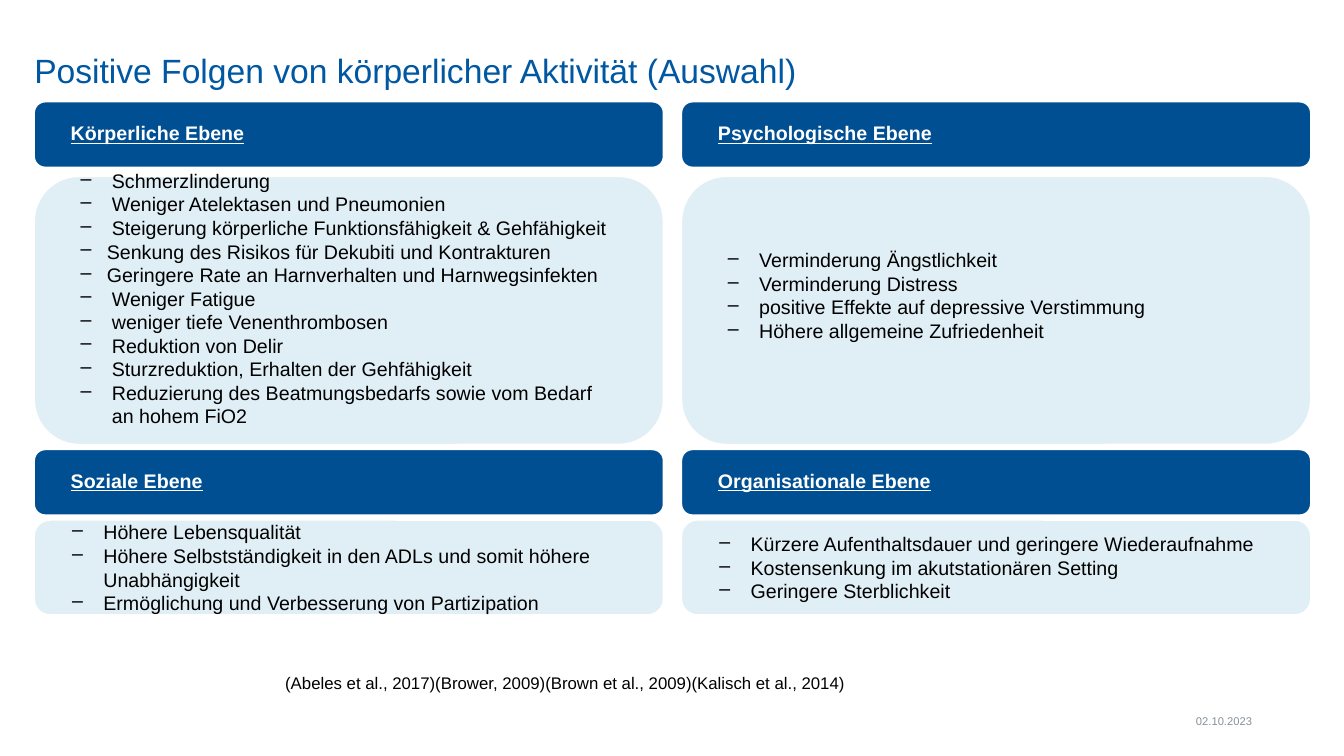
"""Builds a slide on the positive effects of physical activity at four levels."""
import pptx
import pptx.util
import pptx.dml.color
import pptx.enum.shapes
import pptx.enum.text
import pptx.oxml
import pptx.oxml.ns
import lxml.etree

Inches = pptx.util.Inches
RGB = pptx.dml.color.RGBColor
ALIGN = pptx.enum.text.PP_ALIGN
ANCHOR = pptx.enum.text.MSO_ANCHOR
BLUE = RGB(0x00, 0x57, 0xA2)
NAVY = RGB(0x00, 0x4F, 0x93)
PALE = RGB(0xB3, 0xD7, 0xE9)
GREY = RGB(0x86, 0x92, 0x9A)
WHITE = RGB(0xFF, 0xFF, 0xFF)
BLACK = RGB(0x00, 0x00, 0x00)

LEFT, PITCH, WIDTH = 0.34, 6.42, 6.24
HEAD = 0.65
ROWS = [(1.01, 1.75, 2.66), (4.46, 5.16, 0.94)]
WIDE, SLIM = 0.31, 0.26

LEVELS = [
    (0, 0, "Körperliche Ebene", 0.24, [
        ("Schmerzlinderung", WIDE),
        ("Weniger Atelektasen und Pneumonien", WIDE),
        ("Steigerung körperliche Funktionsfähigkeit & Gehfähigkeit", WIDE),
        ("Senkung des Risikos für Dekubiti und Kontrakturen", SLIM),
        ("Geringere Rate an Harnverhalten und Harnwegsinfekten", SLIM),
        ("Weniger Fatigue", WIDE),
        ("weniger tiefe Venenthrombosen", WIDE),
        ("Reduktion von Delir", WIDE),
        ("Sturzreduktion, Erhalten der Gehfähigkeit", WIDE),
        ("Reduzierung des Beatmungsbedarfs sowie vom Bedarf an hohem FiO2", WIDE),
    ]),
    (0, 1, "Psychologische Ebene", 0.3, [
        ("Verminderung Ängstlichkeit", WIDE),
        ("Verminderung Distress", WIDE),
        ("positive Effekte auf depressive Verstimmung", WIDE),
        ("Höhere allgemeine Zufriedenheit", WIDE),
    ]),
    (1, 0, "Soziale Ebene", 0, [
        ("Höhere Lebensqualität", WIDE),
        ("Höhere Selbstständigkeit in den ADLs und somit höhere Unabhängigkeit", WIDE),
        ("Ermöglichung und Verbesserung von Partizipation", WIDE),
    ]),
    (1, 1, "Organisationale Ebene", 0, [
        ("Kürzere Aufenthaltsdauer und geringere Wiederaufnahme", WIDE),
        ("Kostensenkung im akutstationären Setting", WIDE),
        ("Geringere Sterblichkeit", WIDE),
    ]),
]


def panel(col, top, high, fill, base=0):
    """Add a rounded panel in a column and return it."""
    box = slide.shapes.add_shape(
        pptx.enum.shapes.MSO_SHAPE.ROUNDED_RECTANGLE,
        Inches(LEFT + col * PITCH), Inches(top), Inches(WIDTH), Inches(high))
    box.adjustments[0] = 0.167
    box.shadow.inherit = False
    box.fill.solid()
    box.fill.fore_color.rgb = fill
    box.line.color.rgb = WHITE
    box.line.width = pptx.util.Pt(1)
    frame = box.text_frame
    frame.word_wrap = True
    frame.vertical_anchor = ANCHOR.MIDDLE
    frame.margin_left = frame.margin_right = Inches(0.33)
    frame.margin_top, frame.margin_bottom = 0, Inches(base)
    return box


def style(para, text, size, color, align=ALIGN.LEFT):
    """Fill a paragraph with text and set its font."""
    para.text = text
    para.alignment = align
    para.font.name = "Arial"
    para.font.size = pptx.util.Pt(size)
    para.font.color.rgb = color


deck = pptx.Presentation()
deck.slide_width, deck.slide_height = Inches(13.33), Inches(7.5)
slide = deck.slides.add_slide(deck.slide_layouts[6])

for row, col, name, base, items in LEVELS:
    top, under, high = ROWS[row]
    body = panel(col, under, high, PALE, base)
    tint = body.fill._xPr.find(".//" + pptx.oxml.ns.qn("a:srgbClr"))
    lxml.etree.SubElement(tint, pptx.oxml.ns.qn("a:alpha"), val="40000")
    frame = body.text_frame
    for rank, (text, indent) in enumerate(items):
        para = frame.add_paragraph() if rank else frame.paragraphs[0]
        props = para._p.get_or_add_pPr()
        props.set("marL", str(Inches(indent)))
        props.set("indent", str(-Inches(indent)))
        lxml.etree.SubElement(props, pptx.oxml.ns.qn("a:buChar"), char="–")
        style(para, text, 14, BLACK)

    title = panel(col, top, HEAD, NAVY).text_frame.paragraphs[0]
    style(title, name, 14, WHITE)
    title.line_spacing = 0.9
    title.font.bold = title.font.underline = True

LABELS = [
    (0.34, 0.28, 7.58, 0.83, "Positive Folgen von körperlicher Aktivität (Auswahl)",
     24, BLUE, ALIGN.LEFT, False, 0, 0),
    (11.15, 7.09, 1.27, 0.13, "02.10.2023", 8, GREY, ALIGN.RIGHT, True, 0, 0),
    (2.73, 6.62, 5.91, 0.28,
     "(Abeles et al., 2017)(Brower, 2009)(Brown et al., 2009)(Kalisch et al., 2014)",
     12, BLACK, ALIGN.LEFT, True, 0.1, 0.05),
]
for left, top, wide, high, text, size, color, align, wrap, side, edge in LABELS:
    label = slide.shapes.add_textbox(Inches(left), Inches(top), Inches(wide), Inches(high))
    frame = label.text_frame
    frame.word_wrap = wrap
    frame.vertical_anchor = ANCHOR.TOP if edge else ANCHOR.MIDDLE
    frame.margin_left = frame.margin_right = Inches(side)
    frame.margin_top = frame.margin_bottom = Inches(edge)
    style(frame.paragraphs[0], text, size, color, align)

deck.save("out.pptx")
